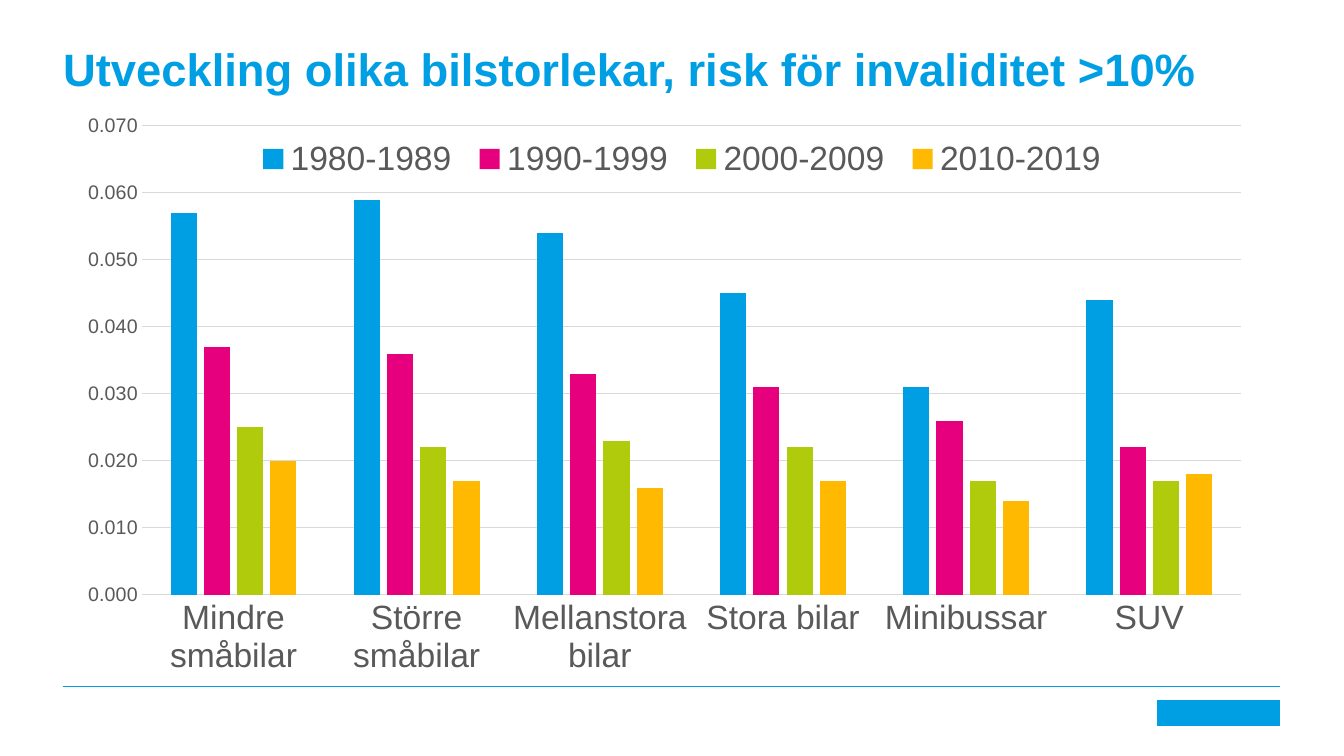
from lxml import etree
from pptx import Presentation
from pptx.chart.data import CategoryChartData
from pptx.dml.color import RGBColor
from pptx.enum.chart import XL_CHART_TYPE, XL_LEGEND_POSITION, XL_TICK_MARK
from pptx.enum.shapes import MSO_CONNECTOR, MSO_SHAPE
from pptx.enum.text import MSO_ANCHOR, MSO_AUTO_SIZE, PP_ALIGN
from pptx.oxml import parse_xml
from pptx.oxml.ns import nsdecls, qn
from pptx.util import Pt

COLUMNS = XL_CHART_TYPE.COLUMN_CLUSTERED
LEGEND_BOTTOM = XL_LEGEND_POSITION.BOTTOM
NO_TICK = XL_TICK_MARK.NONE
STRAIGHT = MSO_CONNECTOR.STRAIGHT
RECTANGLE = MSO_SHAPE.RECTANGLE
TOP = MSO_ANCHOR.TOP
LEFT = PP_ALIGN.LEFT
NO_AUTOFIT = MSO_AUTO_SIZE.NONE

BLUE = RGBColor(0x00, 0x9F, 0xE4)
PINK = RGBColor(0xE6, 0x00, 0x7E)
GREEN = RGBColor(0xB0, 0xCB, 0x0B)
YELLOW = RGBColor(0xFF, 0xB9, 0x00)
GREY = RGBColor(0x59, 0x59, 0x59)
LIGHT_GREY = RGBColor(0xD9, 0xD9, 0xD9)

EMU_PER_PX = 914400 / 100.8
TITLE_ONLY = 5

CATEGORIES = ["Mindre småbilar", "Större småbilar", "Mellanstora bilar",
              "Stora bilar", "Minibussar", "SUV"]
DECADES = [
    ("1980-1989", BLUE, (0.057, 0.059, 0.054, 0.045, 0.031, 0.044)),
    ("1990-1999", PINK, (0.037, 0.036, 0.033, 0.031, 0.026, 0.022)),
    ("2000-2009", GREEN, (0.025, 0.022, 0.023, 0.022, 0.017, 0.017)),
    ("2010-2019", YELLOW, (0.02, 0.017, 0.016, 0.017, 0.014, 0.018)),
]


def px(*lengths):
    return [round(n * EMU_PER_PX) for n in lengths]


def set_all(target, values):
    for name, value in values.items():
        setattr(target, name, value)


class SlideBuilder:
    font = "Arial"

    def __init__(self, prs):
        self.s = prs.slides.add_slide(prs.slide_layouts[TITLE_ONLY])

    def style_font(self, font, size, color, bold=False):
        set_all(font, {"name": self.font, "size": Pt(size), "bold": bold})
        font.color.rgb = color

    def style_line(self, line, color, width):
        line.color.rgb = color
        line.width = Pt(width)

    def title(self, text, box, size, inset_top):
        sp = self.s.shapes.title
        set_all(sp, dict(zip(("left", "top", "width", "height"), px(*box))))
        tf = sp.text_frame
        set_all(tf, {"margin_left": 0, "margin_right": 0, "margin_bottom": 0,
                     "margin_top": px(inset_top)[0], "word_wrap": True,
                     "auto_size": NO_AUTOFIT, "vertical_anchor": TOP})
        p = tf.paragraphs[0]
        p.alignment = LEFT
        r = p.add_run()
        r.text = text
        self.style_font(r.font, size, BLUE, True)

    def rule(self, x1, y1, x2, y2):
        line = self.s.shapes.add_connector(STRAIGHT, *px(x1, y1, x2, y2))
        self.style_line(line.line, BLUE, 0.5)
        etree.SubElement(line._element.spPr, qn("a:effectLst"))

    def block(self, box):
        sp = self.s.shapes.add_shape(RECTANGLE, *px(*box))
        sp.shadow.inherit = False
        sp.fill.solid()
        sp.fill.fore_color.rgb = BLUE
        sp.line.fill.background()

    def place(self, parent, frame, box, inner=False):
        fx, fy, fw, fh = frame
        x, y, w, h = box
        shares = {"x": (x - fx) / fw, "y": (y - fy) / fh, "w": w / fw, "h": h / fh}
        target = '<c:layoutTarget val="inner"/>' if inner else ""
        modes = "".join(f'<c:{a}Mode val="edge"/>' for a in "xy")
        sizes = "".join(f'<c:{a} val="{v:.4f}"/>' for a, v in shares.items())
        layout = parse_xml(f'<c:layout {nsdecls("c")}><c:manualLayout>{target}{modes}'
                           f'{sizes}</c:manualLayout></c:layout>')
        for old in parent.findall(qn("c:layout")):
            parent.remove(old)
        parent.insert(1 if parent.tag == qn("c:legend") else 0, layout)

    def column_chart(self, frame, plot_box, legend_box):
        data = CategoryChartData(number_format="0.000")
        data.categories = CATEGORIES
        for name, _, values in DECADES:
            data.add_series(name, values)
        chart = self.s.shapes.add_chart(COLUMNS, *px(*frame), data).chart
        set_all(chart, {"has_title": False, "has_legend": True})
        self.style_font(chart.font, 10, GREY)

        plot = chart.plots[0]
        set_all(plot, {"gap_width": 219, "overlap": -27, "vary_by_categories": False})
        for series, (_, color, _) in zip(plot.series, DECADES):
            series.format.fill.solid()
            series.format.fill.fore_color.rgb = color

        cats, vals = chart.category_axis, chart.value_axis
        for axis, size in ((cats, 24), (vals, 14)):
            set_all(axis, {"major_tick_mark": NO_TICK, "minor_tick_mark": NO_TICK})
            self.style_font(axis.tick_labels.font, size, GREY)
        self.style_line(cats.format.line, LIGHT_GREY, 0.75)
        set_all(vals, {"minimum_scale": 0, "maximum_scale": 0.07, "major_unit": 0.01,
                       "has_major_gridlines": True})
        set_all(vals.tick_labels, {"number_format": "0.000",
                                   "number_format_is_linked": False})
        vals.format.line.fill.background()
        self.style_line(vals.major_gridlines.format.line, LIGHT_GREY, 0.75)

        legend = chart.legend
        set_all(legend, {"position": LEGEND_BOTTOM, "include_in_layout": False})
        self.style_font(legend.font, 24, GREY)
        self.place(legend._element, frame, legend_box)
        self.place(plot._element.getparent(), frame, plot_box, inner=True)


def main():
    prs = Presentation()
    prs.slide_width, prs.slide_height = px(1344, 756)
    slide = SlideBuilder(prs)
    slide.rule(63, 686, 1280, 686)
    slide.block((1157, 700, 123, 26))
    slide.title("Utveckling olika bilstorlekar, risk för invaliditet >10%",
                (63, 36, 1156, 88), 32.4, 5)
    slide.column_chart((63, 103, 1200, 644), (142, 126, 1099, 469),
                       (246, 138, 872, 42))
    prs.save("out.pptx")


if __name__ == "__main__":
    main()
